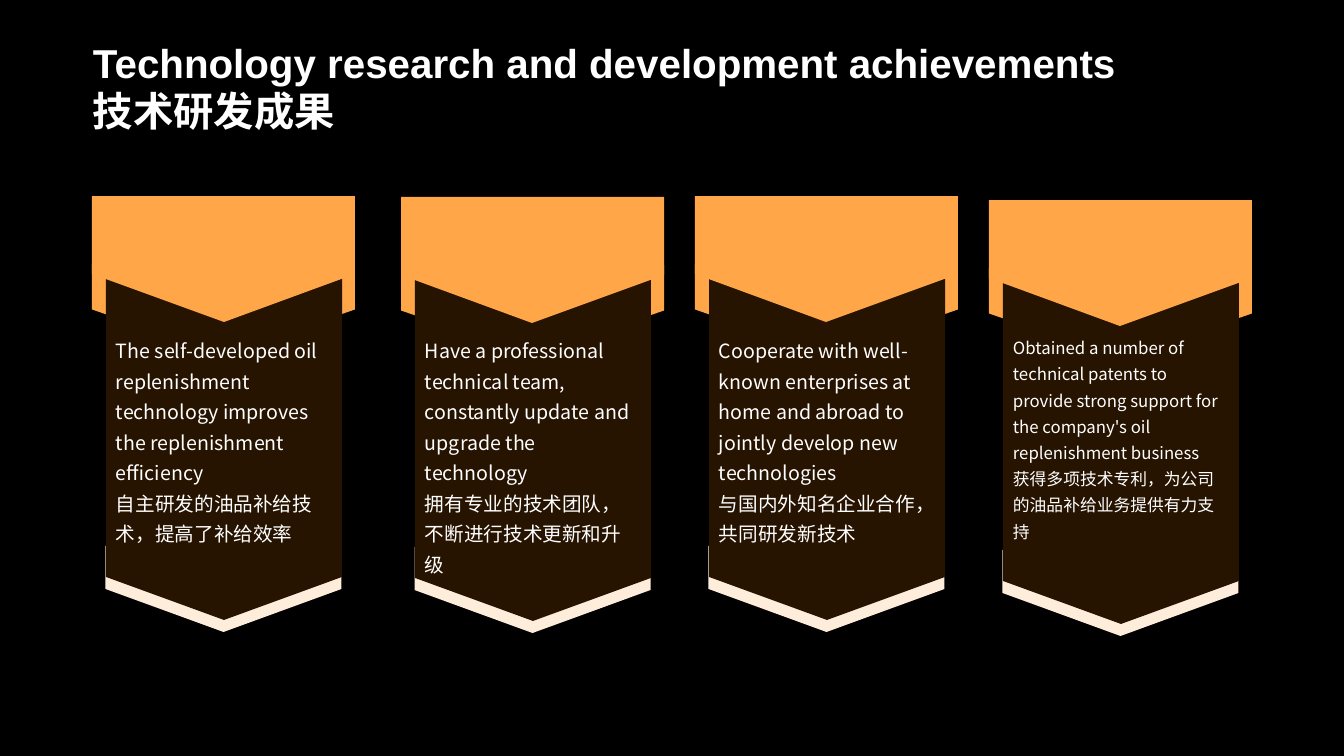
from lxml.etree import SubElement
from pptx import Presentation
from pptx.dml.color import RGBColor
from pptx.enum.shapes import MSO_SHAPE as Shape
from pptx.enum.text import MSO_ANCHOR as Anchor
from pptx.oxml.ns import qn
from pptx.util import Emu, Pt

PX = 914400 / 100.8  # EMU per pixel
BLACK = RGBColor(0x00, 0x00, 0x00)
WHITE = RGBColor(0xFF, 0xFF, 0xFF)
ORANGE = RGBColor(0xFF, 0xA6, 0x49)
CREAM = RGBColor(0xFF, 0xED, 0xDB)
BROWN = RGBColor(0x26, 0x13, 0x00)
CJK_FONT = "Noto Sans CJK SC"


def px(*lengths):
    return [Emu(round(length * PX)) for length in lengths]


def style_text(paragraph, font_name, size, bold=False):
    font = paragraph.font
    font.name, font.size, font.bold = font_name, Pt(size), bold
    font.color.rgb = WHITE
    defaults = paragraph._p.pPr.find(qn("a:defRPr"))
    SubElement(defaults, qn("a:ea")).set("typeface", CJK_FONT)


prs = Presentation()
prs.slide_width, prs.slide_height = px(1344, 756)
slide = prs.slides.add_slide(prs.slide_layouts[6])
slide.background.fill.solid()
slide.background.fill.fore_color.rgb = BLACK
shapes = slide.shapes

# Title
title = shapes.add_textbox(*px(93, 39, 1159, 95)).text_frame
title.word_wrap = True
title.vertical_anchor = Anchor.MIDDLE
title.margin_left = title.margin_right = title.margin_top = title.margin_bottom = 0
title.text = "Technology research and development achievements\v技术研发成果"
style_text(title.paragraphs[0], "Arial", 28.8, bold=True)

# Achievement banners: left, top, text size, English, Chinese
achievements = [
    (92, 196, 14,
     "The self-developed oil replenishment technology improves the replenishment efficiency",
     "自主研发的油品补给技术，提高了补给效率"),
    (401, 197, 14,
     "Have a professional technical team, constantly update and upgrade the technology",
     "拥有专业的技术团队，不断进行技术更新和升级"),
    (695, 196, 14,
     "Cooperate with well-known enterprises at home and abroad to jointly develop new technologies",
     "与国内外知名企业合作，共同研发新技术"),
    (989, 200, 12,
     "Obtained a number of technical patents to provide strong support for the company's oil "
     "replenishment business",
     "获得多项技术专利，为公司的油品补给业务提供有力支持"),
]
HEAD_WIDTH, BODY_WIDTH, BODY_INSET = 263, 236, 14

for left, top, size, english, chinese in achievements:
    body_left = left + BODY_INSET
    center = left + HEAD_WIDTH / 2
    parts = []

    # Pentagons behind, turned to point down
    for width, offset, depth, color in [(HEAD_WIDTH, 68, 91, ORANGE),
                                        (BODY_WIDTH, 350, 86, CREAM)]:
        middle = top + offset + depth / 2
        pentagon = shapes.add_shape(
            Shape.PENTAGON, *px(center - depth / 2, middle - width / 2, depth, width))
        pentagon.rotation = 90
        parts.append((pentagon, color))

    # Dark body, then orange head, each with a pointed lower edge
    for x, width, start, edge, tip, color in [
            (body_left, BODY_WIDTH, 67, 381, 424, BROWN),
            (left, HEAD_WIDTH, 0, 78, 126, ORANGE)]:
        outline = shapes.build_freeform(x, top + start, scale=PX)
        outline.add_line_segments([
            (x + width, top + start), (x + width, top + edge),
            (x + width / 2, top + tip), (x, top + edge)], close=True)
        parts.append((outline.convert_to_shape(), color))

    for part, color in parts:
        part.shadow.inherit = False
        part.fill.solid()
        part.fill.fore_color.rgb = color
        part.line.fill.background()

    # Description
    description = shapes.add_textbox(*px(body_left, 327, BODY_WIDTH, 250)).text_frame
    description.word_wrap = True
    description.text = f"{english}\n{chinese}"
    for paragraph in description.paragraphs:
        paragraph.line_spacing = 1.3
        style_text(paragraph, CJK_FONT, size)

prs.save("out.pptx")
